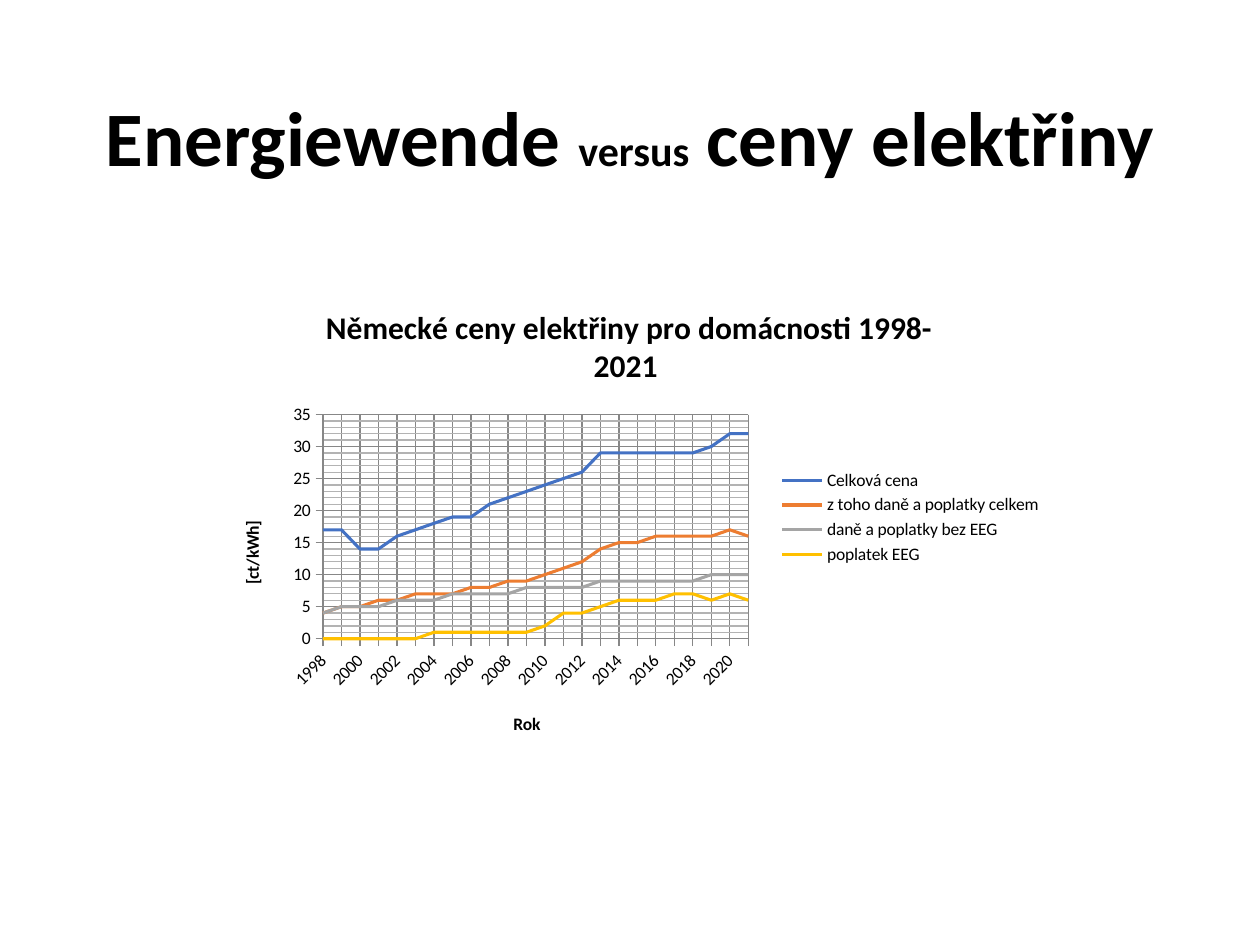
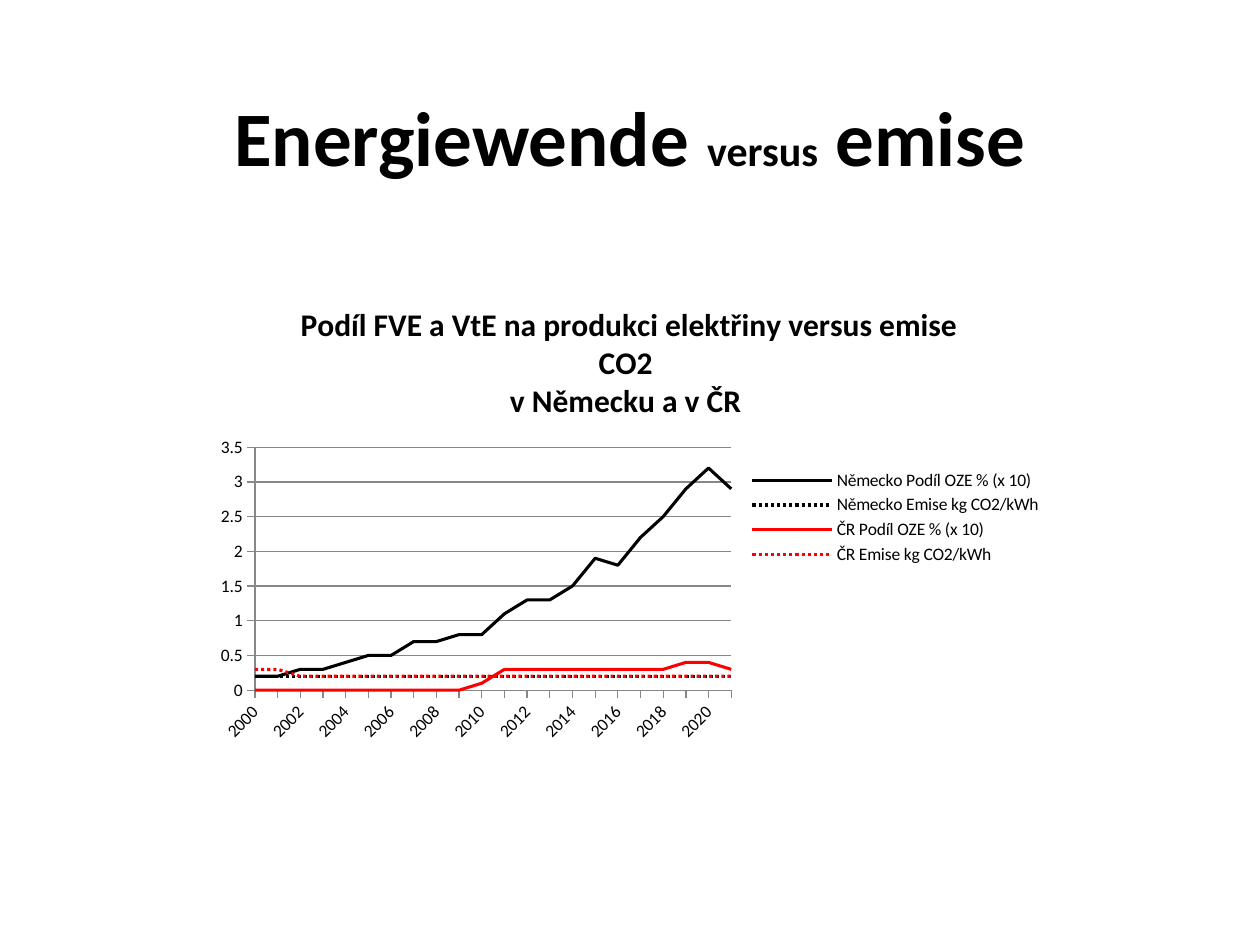
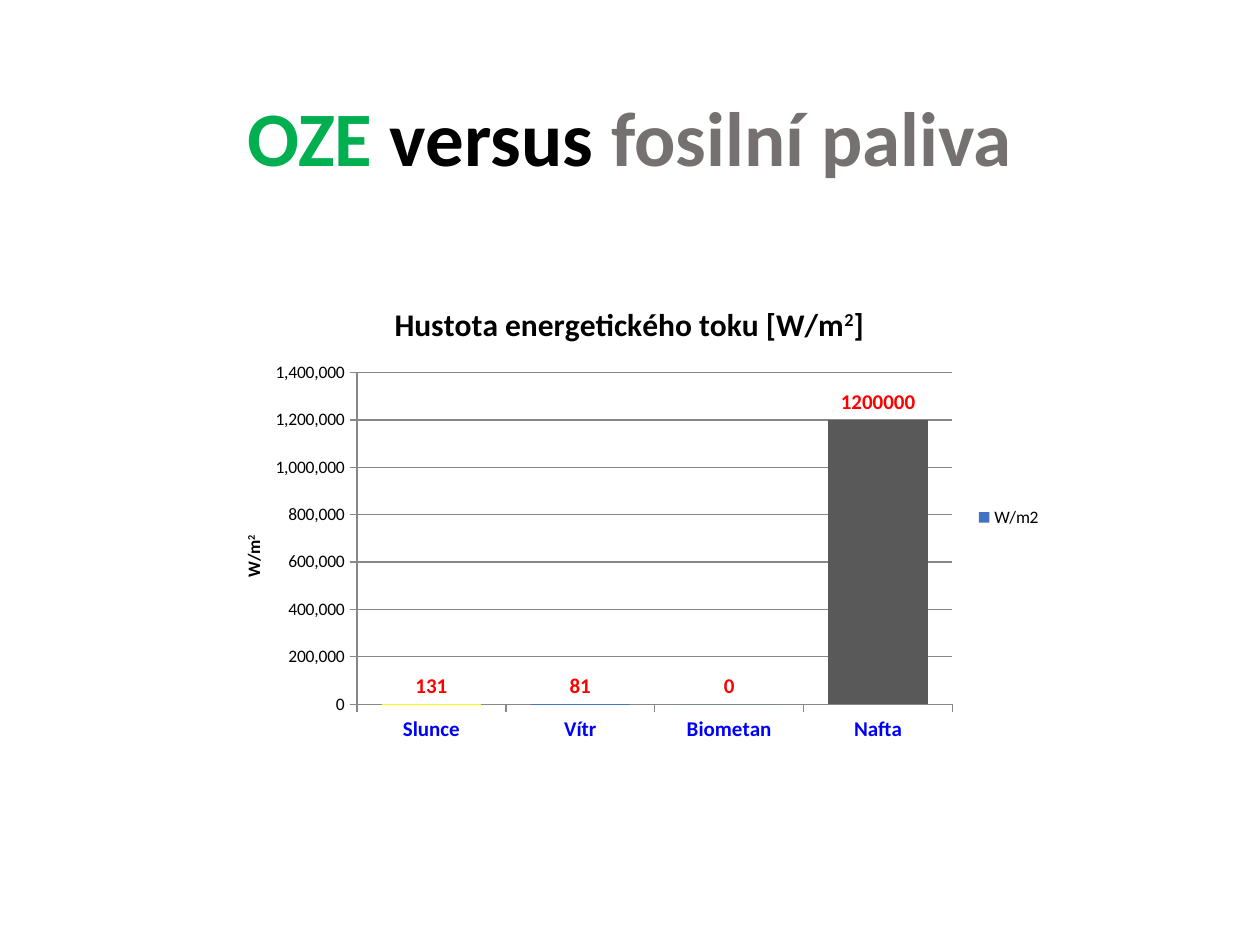
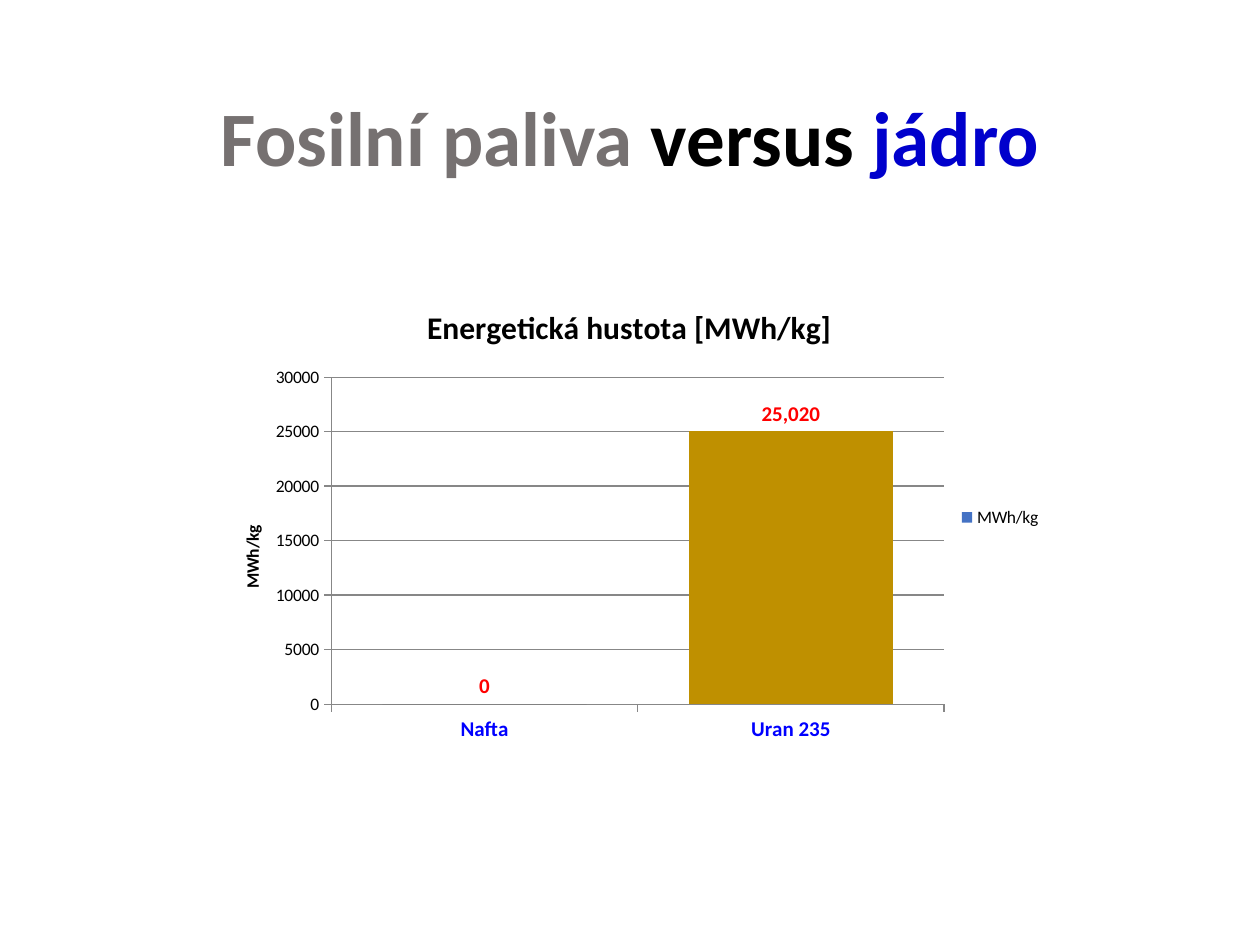
from lxml import etree
from pptx import Presentation
from pptx.chart.data import CategoryChartData
from pptx.dml.color import RGBColor
from pptx.enum.chart import XL_CHART_TYPE, XL_LABEL_POSITION, XL_LEGEND_POSITION, XL_TICK_MARK
from pptx.enum.dml import MSO_LINE
from pptx.enum.text import MSO_ANCHOR, MSO_AUTO_SIZE, PP_ALIGN
from pptx.oxml.ns import qn
from pptx.util import Cm, Pt

# Shared style
FONT = "Calibri"
BLACK, RED, GREEN, BLUE = "000000", "FF0000", "00B050", "4472C4"
FOSSIL, NUCLEAR, CATEGORY, OIL = "767171", "0000CC", "0000FF", "595959"
GRID, MINOR_GRID = "878787", "B3B3B3"
TITLE_BOX = Cm(1.75), Cm(1.02), Cm(21.9), Cm(3.68)
CHART_BOX = Cm(4.11), Cm(5.72), Cm(17.15), Cm(9.42)

# Content: heading runs are (text, size, colour); a chart text is a list of
# runs in which "2" is raised; series are (name, colour, dotted, values).
# Plot areas and axis title places are fractions of the chart box.
SLIDES = [
    {
        "heading": [("Energiewende ", 44, BLACK), ("versus", 24, BLACK),
                    (" ceny elektřiny ", 44, BLACK)],
        "title": ["Německé ceny elektřiny pro domácnosti 1998-2021 "],
        "years": (1998, 2021),
        "plot": (0.14, 0.28, 0.5, 0.48),
        "value_title": (["[ct/kWh]"], (0.04, 0.5)),
        "category_title": (["Rok"], (0.36, 0.91)),
        "scale": (35, 5),
        "minor_step": 1,
        "series": [
            ("Celková cena", BLUE, False,
             [17, 17, 14, 14, 16, 17, 18, 19, 19, 21, 22, 23,
              24, 25, 26, 29, 29, 29, 29, 29, 29, 30, 32, 32]),
            ("z toho daně a poplatky celkem", "ED7D31", False,
             [4, 5, 5, 6, 6, 7, 7, 7, 8, 8, 9, 9,
              10, 11, 12, 14, 15, 15, 16, 16, 16, 16, 17, 16]),
            ("daně a poplatky bez EEG", "A5A5A5", False,
             [4, 5, 5, 5, 6, 6, 6, 7, 7, 7, 7, 8,
              8, 8, 8, 9, 9, 9, 9, 9, 9, 10, 10, 10]),
            ("poplatek EEG", "FFC000", False,
             [0, 0, 0, 0, 0, 0, 1, 1, 1, 1, 1, 1,
              2, 4, 4, 5, 6, 6, 6, 7, 7, 6, 7, 6]),
        ],
    },
    {
        "heading": [("Energiewende ", 44, BLACK), ("versus", 24, BLACK),
                    (" emise", 44, BLACK)],
        "title": ["Podíl FVE a VtE na produkci elektřiny versus emise CO2 \nv Německu a v ČR "],
        "years": (2000, 2021),
        "plot": (0.06, 0.35, 0.56, 0.52),
        "scale": (3.5, 0.5),
        "series": [
            ("Německo Podíl OZE % (x 10)", BLACK, False,
             [0.2, 0.2, 0.3, 0.3, 0.4, 0.5, 0.5, 0.7, 0.7, 0.8, 0.8,
              1.1, 1.3, 1.3, 1.5, 1.9, 1.8, 2.2, 2.5, 2.9, 3.2, 2.9]),
            ("Německo Emise kg CO2/kWh", BLACK, True, [0.2] * 22),
            ("ČR Podíl OZE % (x 10)", RED, False,
             [0] * 10 + [0.1] + [0.3] * 8 + [0.4, 0.4, 0.3]),
            ("ČR Emise kg CO2/kWh", RED, True, [0.3] * 2 + [0.2] * 20),
        ],
    },
    {
        "heading": [("OZE", 44, GREEN), (" versus ", 44, BLACK), ("fosilní paliva", 44, FOSSIL)],
        "title": ["Hustota energetického toku [W/m", "2", "]"],
        "plot": (0.18, 0.19, 0.7, 0.71),
        "value_title": (["W/m", "2"], (0.04, 0.53)),
        "scale": (1400000, 200000),
        "formats": ("#,##0", "0"),
        "name": "W/m2",
        "bars": [("Slunce", 131, "FFFF00"), ("Vítr", 81, BLUE),
                 ("Biometan", 0, GREEN), ("Nafta", 1200000, OIL)],
    },
    {
        "heading": [("Fosilní paliva ", 44, FOSSIL), ("versus ", 44, BLACK),
                    ("jádro", 44, NUCLEAR)],
        "title": ["Energetická hustota [MWh/kg]"],
        "plot": (0.15, 0.2, 0.72, 0.7),
        "value_title": (["MWh/kg"], (0.04, 0.51)),
        "scale": (30000, 5000),
        "formats": ("0", "#,##0"),
        "name": "MWh/kg",
        "bars": [("Nafta", 0, OIL), ("Uran 235", 25020, "BF9000")],
    },
]


def rgb(value):
    return RGBColor.from_string(value)


def style(font, size, color=BLACK, bold=False):
    font.name, font.size, font.bold = FONT, Pt(size), bold
    font.color.rgb = rgb(color)


def place(parent, position, fractions, inner=False):
    """Give a chart part a manual layout."""
    for old in parent.findall(qn("c:layout")):
        parent.remove(old)
    layout = etree.Element(qn("c:layout"))
    manual = etree.SubElement(layout, qn("c:manualLayout"))
    settings = [("layoutTarget", "inner")] if inner else []
    settings += [("xMode", "edge"), ("yMode", "edge")]
    settings += zip("xywh", fractions)
    for tag, value in settings:
        etree.SubElement(manual, qn("c:" + tag)).set("val", str(value))
    parent.insert(position, layout)


def write_title(title, texts, size):
    frame = title.text_frame
    frame.text = texts[0]
    for text in texts[1:]:
        frame.paragraphs[-1].add_run().text = text
    for paragraph in frame.paragraphs:
        for span in paragraph.runs:
            style(span.font, size, bold=True)
            if span.text == "2":
                span._r.get_or_add_rPr().set("baseline", "30000")


def add_axis_title(axis, content):
    if content:
        texts, corner = content
        write_title(axis.axis_title, texts, 10)
        place(axis.axis_title._element, 1, corner)


def draw_grid(lines):
    lines.format.line.color.rgb = rgb(GRID)
    lines.format.line.width = Pt(0.75)


def draw_minor_grid(axis):
    axis.has_minor_gridlines = True
    parent = axis._element.find(qn("c:minorGridlines"))
    shape = etree.SubElement(parent, qn("c:spPr"))
    line = etree.SubElement(shape, qn("a:ln"), w=str(Pt(0.75)))
    fill = etree.SubElement(line, qn("a:solidFill"))
    etree.SubElement(fill, qn("a:srgbClr"), val=MINOR_GRID)


def format_axes(chart, content):
    category, value = chart.category_axis, chart.value_axis
    for axis in (category, value):
        axis.major_tick_mark = XL_TICK_MARK.OUTSIDE
        axis.minor_tick_mark = XL_TICK_MARK.NONE
        style(axis.tick_labels.font, 10)
        draw_grid(axis)
    value.minimum_scale = 0
    value.maximum_scale, value.major_unit = content["scale"]
    value.has_major_gridlines = True
    draw_grid(value.major_gridlines)
    add_axis_title(value, content.get("value_title"))
    add_axis_title(category, content.get("category_title"))


def format_lines(chart, content):
    category, value = chart.category_axis, chart.value_axis
    # Slanted years, and lines that start on the value axis
    body = category._element.find(qn("c:txPr")).find(qn("a:bodyPr"))
    body.set("rot", "-2700000")
    crossing = value._element.find(qn("c:crossBetween"))
    if crossing is None:
        crossing = etree.Element(qn("c:crossBetween"))
        value._element.find(qn("c:crosses")).addnext(crossing)
    crossing.set("val", "midCat")
    if "minor_step" in content:
        value.minor_unit = content["minor_step"]
        category.has_major_gridlines = True
        draw_grid(category.major_gridlines)
        draw_minor_grid(value)
    for series, (_, color, dotted, _) in zip(chart.plots[0].series, content["series"]):
        series.smooth = False
        series.format.line.color.rgb = rgb(color)
        series.format.line.width = Pt(1.75)
        if dotted:
            series.format.line.dash_style = MSO_LINE.ROUND_DOT


def format_bars(chart, content):
    axis_format, label_format = content["formats"]
    labels = chart.value_axis.tick_labels
    labels.number_format, labels.number_format_is_linked = axis_format, False
    style(chart.category_axis.tick_labels.font, 12, CATEGORY, True)
    plot = chart.plots[0]
    plot.gap_width, plot.vary_by_categories = 50, False
    series = plot.series[0]
    series.format.fill.solid()
    series.format.fill.fore_color.rgb = rgb(BLUE)
    for index, (_, _, color) in enumerate(content["bars"]):
        if color != BLUE:
            fill = series.points[index].format.fill
            fill.solid()
            fill.fore_color.rgb = rgb(color)
    labels = series.data_labels
    labels.show_value = True
    labels.position = XL_LABEL_POSITION.OUTSIDE_END
    labels.number_format, labels.number_format_is_linked = label_format, False
    style(labels.font, 12, RED, True)


def add_heading(page, runs):
    box = page.shapes.title
    box.left, box.top, box.width, box.height = TITLE_BOX
    frame = box.text_frame
    frame.word_wrap, frame.auto_size = True, MSO_AUTO_SIZE.NONE
    frame.vertical_anchor = MSO_ANCHOR.MIDDLE
    paragraph = frame.paragraphs[0]
    paragraph.alignment, paragraph.line_spacing = PP_ALIGN.CENTER, 0.9
    for text, size, color in runs:
        span = paragraph.add_run()
        span.text = text
        style(span.font, size, color, True)


def add_slide_chart(page, content):
    is_line = "years" in content
    data = CategoryChartData()
    if is_line:
        first, last = content["years"]
        data.categories = [str(year) for year in range(first, last + 1)]
        for name, _, _, values in content["series"]:
            data.add_series(name, values)
    else:
        names, values, _ = zip(*content["bars"])
        data.categories = names
        data.add_series(content["name"], values)
    kind = XL_CHART_TYPE.LINE if is_line else XL_CHART_TYPE.COLUMN_CLUSTERED
    chart = page.shapes.add_chart(kind, *CHART_BOX, data).chart
    style(chart.font, 10)
    chart.has_title = chart.has_legend = True
    write_title(chart.chart_title, content["title"], 18)
    chart.legend.position = XL_LEGEND_POSITION.RIGHT
    chart.legend.include_in_layout = False
    style(chart.legend.font, 10)
    format_axes(chart, content)
    (format_lines if is_line else format_bars)(chart, content)
    plot_area = chart._chartSpace.find(qn("c:chart")).find(qn("c:plotArea"))
    place(plot_area, 0, content["plot"], inner=True)


def main():
    deck = Presentation()
    deck.slide_width, deck.slide_height = Cm(25.4), Cm(19.05)
    for content in SLIDES:
        page = deck.slides.add_slide(deck.slide_layouts[5])
        add_heading(page, content["heading"])
        add_slide_chart(page, content)
    deck.save("out.pptx")


if __name__ == "__main__":
    main()
